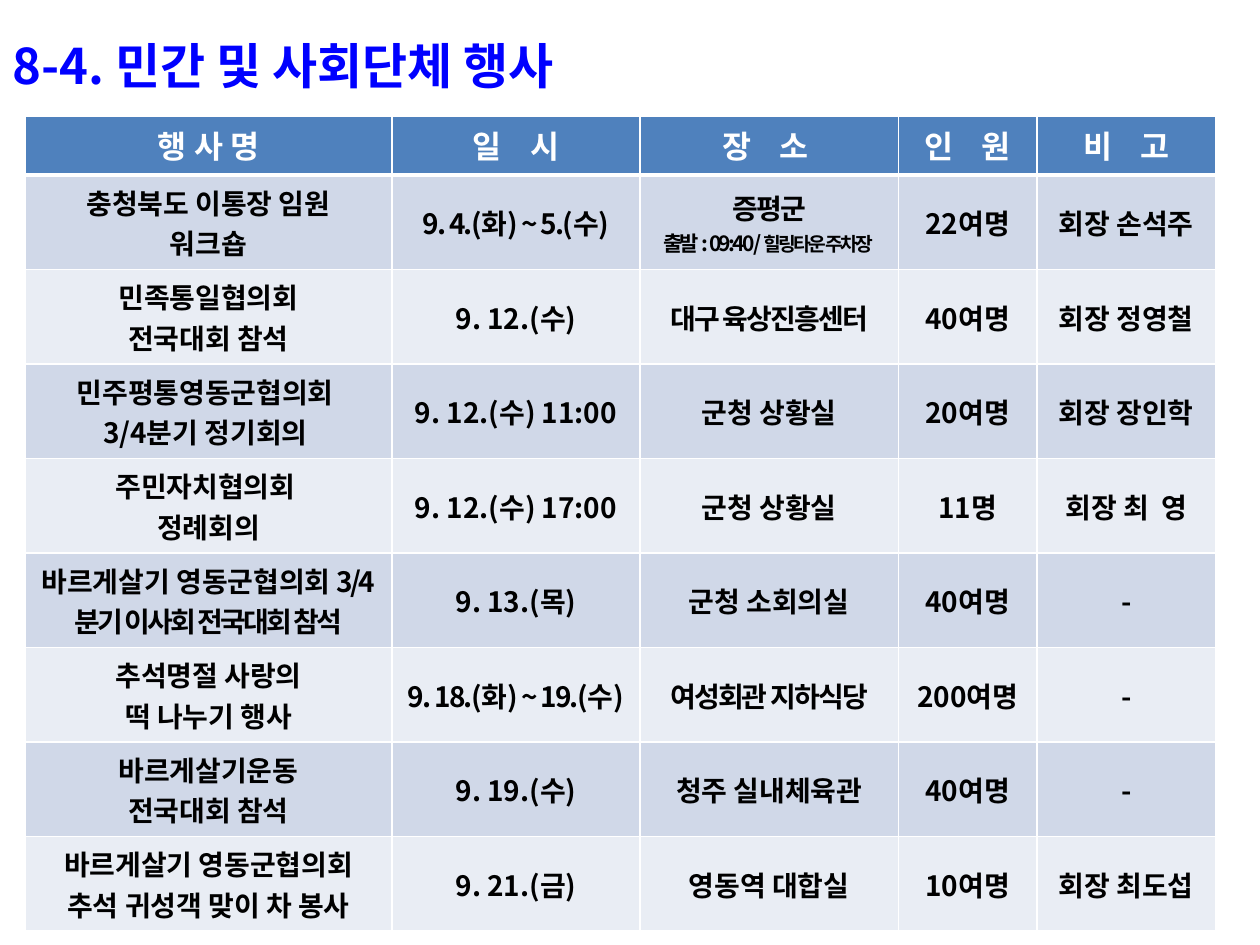
"""Build the slide listing events of private and civic groups."""
from dataclasses import dataclass

from lxml.etree import SubElement
from pptx import Presentation
from pptx.dml.color import RGBColor as Color
from pptx.enum.text import MSO_ANCHOR as Anchor, PP_ALIGN as Align
from pptx.oxml.ns import qn
from pptx.util import Pt

EMU_PER_PX = 9144


@dataclass(frozen=True)
class Theme:
    """Colours, fonts and type sizes."""
    title: str = "0000FF"
    header: str = "4F81BD"
    bands: tuple[str, str] = ("D0D8E8", "E9EDF4")
    light: str = "FFFFFF"
    dark: str = "000000"
    korean: str = "Noto Sans CJK KR"
    header_font: str = "Arial"
    title_size: int = 28
    header_size: int = 18
    body_size: int = 16
    note_size: int = 12
    small_size: int = 11


THEME = Theme()


@dataclass(frozen=True)
class Span:
    """A stretch of text with its tracking and size in points."""
    text: str
    tracking: float = 0
    size: int = THEME.body_size


Line = tuple[Span, ...]


@dataclass(frozen=True)
class Style:
    """The look of one paragraph."""
    font: str
    color: str
    align: Align = Align.CENTER


@dataclass(frozen=True)
class Event:
    """One row of the table."""
    name: tuple[Line, ...]
    date: Span
    place: tuple[Line, ...]
    people: str
    note: str = "-"

    def cells(self) -> list[tuple[Line, ...]]:
        """Return the lines of each cell from left to right."""
        return [self.name, ((self.date,),), self.place,
                lines(self.people), lines(self.note)]


def px(value: int) -> int:
    """Turn px into EMU."""
    return value * EMU_PER_PX


def lines(*texts: str, tracking: float = 0) -> tuple[Line, ...]:
    """Make one line of a single span from each text."""
    return tuple((Span(text, tracking),) for text in texts)


HEADERS = ("행 사 명", "일    시", "장    소 ", "인    원", "비    고")
WIDTHS = (291, 197, 205, 110, 142)
HEADER_HEIGHT, ROW_HEIGHT = 47, 75
EVENTS = (
    Event(lines("충청북도 이통장 임원", " 워크숍 "), Span("9. 4.(화) ~ 5.(수)", -1),
          lines("증평군", tracking=-1)
          + ((Span("출발 :  09:40 / ", -1.6, THEME.note_size),
              Span("힐링타운 주차장 ", -1.6, THEME.small_size)),),
          "22여명", "회장 손석주"),
    Event(lines("민족통일협의회", "전국대회 참석"), Span("9. 12.(수)"),
          lines("대구 육상진흥센터", tracking=-1), "40여명", "회장 정영철"),
    Event(lines("민주평통영동군협의회 ", "3/4분기 정기회의 "), Span("9. 12.(수) 11:00"),
          lines("군청 상황실"), "20여명", "회장 장인학"),
    Event(lines("주민자치협의회 ", "정례회의"), Span("9. 12.(수) 17:00"),
          lines("군청 상황실"), "11명", "회장 최  영"),
    Event(((Span("바르게살기 영동군협의회 "),
            Span("3/4분기 이사회 전국대회 참석", -1.5)),),
          Span("9. 13.(목)"), lines("군청 소회의실"), "40여명"),
    Event(lines(" 추석명절 사랑의 ", "떡 나누기 행사"), Span("9. 18.(화) ~ 19.(수)", -1),
          lines("여성회관 지하식당", tracking=-1), "200여명"),
    Event(lines("바르게살기운동", "전국대회 참석"), Span("9. 19.(수)"),
          lines("청주 실내체육관"), "40여명"),
    Event(lines("바르게살기 영동군협의회 추석 귀성객 맞이 차 봉사"), Span("9. 21.(금)"),
          lines("영동역 대합실"), "10여명", "회장 최도섭"),
)


def write_line(para, line: Line, style: Style) -> None:
    """Write the spans of a line into a paragraph."""
    para.alignment = style.align
    para.font.name = style.font
    para.font.bold = True
    para.font.color.rgb = Color.from_string(style.color)
    for item in line:
        span = para.add_run()
        span.text = item.text
        span.font.size = Pt(item.size)
        properties = span.font._element
        if item.tracking:
            properties.set("spc", str(round(item.tracking * 100)))
        SubElement(properties, qn("a:ea"), typeface=THEME.korean)


def draw_borders(cell, bottom: int) -> None:
    """Give a cell white borders, with the bottom width in points."""
    properties = cell._tc.get_or_add_tcPr()
    for side, width in (("L", 1), ("R", 1), ("T", 1), ("B", bottom)):
        border = SubElement(properties, qn(f"a:ln{side}"), w=str(Pt(width)))
        fill = SubElement(border, qn("a:solidFill"))
        SubElement(fill, qn("a:srgbClr"), val=THEME.light)


def fill_cell(cell, content: tuple[Line, ...], fill: str, style: Style,
              anchor: Anchor = Anchor.MIDDLE, bottom: int = 1) -> None:
    """Fill a cell with colour, borders and lines of text."""
    draw_borders(cell, bottom)
    cell.fill.solid()
    cell.fill.fore_color.rgb = Color.from_string(fill)
    cell.vertical_anchor = anchor
    frame = cell.text_frame
    for index, line in enumerate(content):
        para = frame.add_paragraph() if index else frame.paragraphs[0]
        write_line(para, line, style)


def add_title(page) -> None:
    """Add the heading."""
    box = page.shapes.add_textbox(0, 0, px(1000), px(90))
    box.text_frame.word_wrap = True
    para = box.text_frame.paragraphs[0]
    para.line_spacing = 1.5
    title = Span("8-4. 민간 및 사회단체 행사", size=THEME.title_size)
    write_line(para, (title,), Style(THEME.korean, THEME.title, Align.LEFT))


def add_events(page) -> None:
    """Add the table of events."""
    height = HEADER_HEIGHT + ROW_HEIGHT * len(EVENTS)
    table = page.shapes.add_table(len(EVENTS) + 1, len(HEADERS), px(20), px(92),
                                  px(sum(WIDTHS)), px(height)).table
    for column, width in zip(table.columns, WIDTHS):
        column.width = px(width)
    for index, row in enumerate(table.rows):
        row.height = px(ROW_HEIGHT if index else HEADER_HEIGHT)
    heading = Style(THEME.header_font, THEME.light)
    for column, text in enumerate(HEADERS):
        content = ((Span(text, size=THEME.header_size),),)
        fill_cell(table.cell(0, column), content, THEME.header, heading,
                  Anchor.TOP, bottom=3)
    body = Style(THEME.korean, THEME.dark)
    for row, event in enumerate(EVENTS, 1):
        for column, content in enumerate(event.cells()):
            fill_cell(table.cell(row, column), content,
                      THEME.bands[(row - 1) % 2], body)


def main() -> None:
    """Build and save the deck."""
    deck = Presentation()
    deck.slide_width, deck.slide_height = px(1000), px(750)
    page = deck.slides.add_slide(deck.slide_layouts[6])
    add_title(page)
    add_events(page)
    deck.save("out.pptx")


if __name__ == "__main__":
    main()
